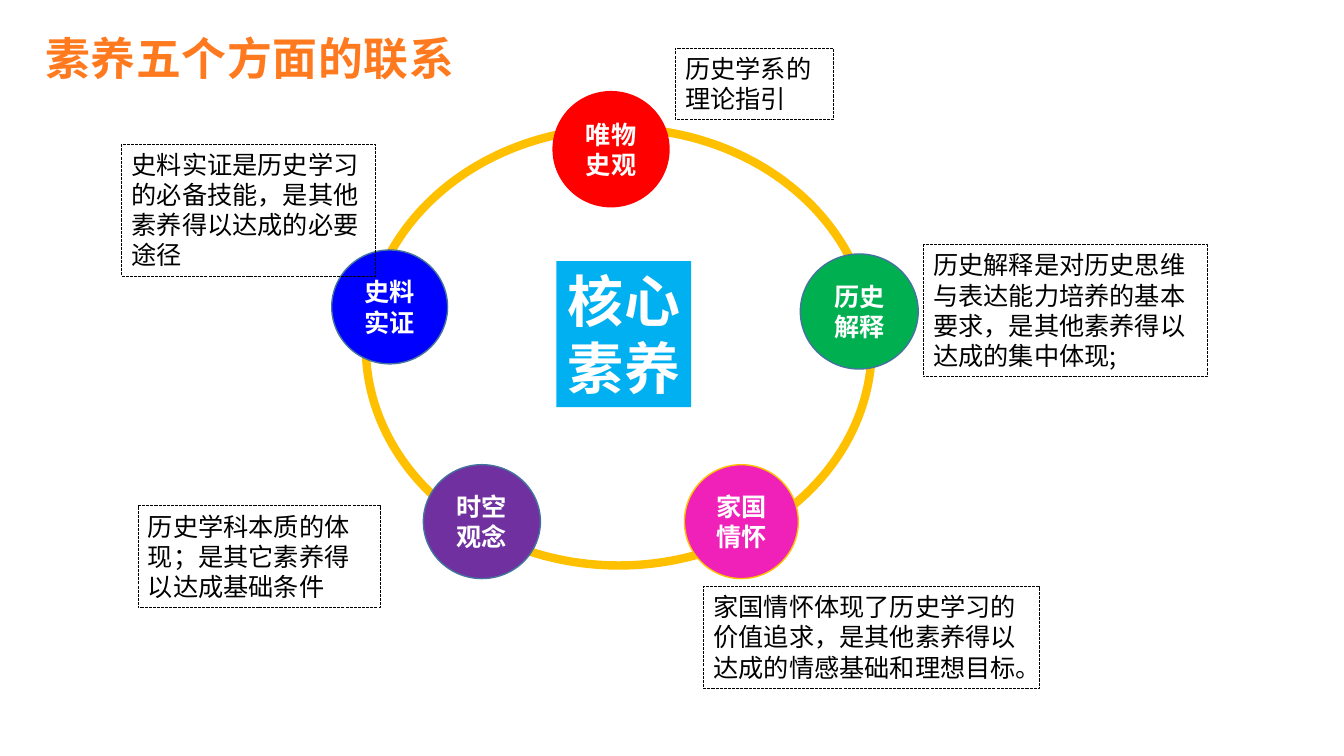
from lxml import etree
from pptx import Presentation
from pptx.dml.color import RGBColor
from pptx.enum.dml import MSO_LINE
from pptx.enum.shapes import MSO_SHAPE
from pptx.enum.text import MSO_ANCHOR, MSO_AUTO_SIZE, PP_ALIGN
from pptx.oxml.ns import qn
from pptx.util import Cm, Pt

OVAL = MSO_SHAPE.OVAL
RECTANGLE = MSO_SHAPE.RECTANGLE
SHORT_DASH = MSO_LINE.SQUARE_DOT
TOP = MSO_ANCHOR.TOP
MIDDLE = MSO_ANCHOR.MIDDLE
GROW = MSO_AUTO_SIZE.SHAPE_TO_FIT_TEXT
LEFT = PP_ALIGN.LEFT
CENTER = PP_ALIGN.CENTER

BODY_FONT = "Noto Sans CJK SC"
DISPLAY_FONT = "Calibri"
WHITE = "FFFFFF"
BLACK = "000000"
GOLD = "FFC000"
STEEL = "43739E"

COMPETENCIES = [
    ("唯物史观", (13.94, 2.31, 2.92, 2.9), "FF0000", "FF0000"),
    ("史料实证", (8.36, 6.3, 2.92, 2.87), "0000FF", STEEL),
    ("历史解释", (20.17, 6.4, 2.97, 2.9), "00B050", STEEL),
    ("时空观念", (10.67, 11.71, 2.95, 2.87), "7030A0", STEEL),
    ("家国情怀", (17.25, 11.71, 2.87, 2.87), "EF21B9", GOLD),
]

NOTES = [
    ("历史学系的理论指引", (17.02, 1.22, 3.99, 1.8)),
    ("史料实证是历史学习的必备技能，是其他素养得以达成的必要途径",
     (3.07, 3.63, 6.4, 3.33)),
    ("历史解释是对历史思维与表达能力培养的基本要求，是其他素养得以达成的集中体现;",
     (23.27, 6.17, 7.16, 3.33)),
    ("家国情怀体现了历史学习的价值追求，是其他素养得以达成的情感基础和理想目标。",
     (17.73, 14.78, 8.46, 2.57)),
    ("历史学科本质的体现；是其它素养得以达成基础条件",
     (3.48, 12.75, 6.1, 2.57)),
]


def color(value):
    return RGBColor.from_string(value)


def add_outline(slide, kind, box, fill=None, line=None, width=1):
    shape = slide.shapes.add_shape(kind, *map(Cm, box))
    shape.shadow.inherit = False
    if fill:
        shape.fill.solid()
        shape.fill.fore_color.rgb = color(fill)
    else:
        shape.fill.background()
    if line:
        shape.line.color.rgb = color(line)
        shape.line.width = Pt(width)
    else:
        shape.line.fill.background()
    return shape


def write(shape, lines, size, text_color, font_name=BODY_FONT, bold=False,
          align=CENTER, anchor=TOP, wrap=True):
    frame = shape.text_frame
    frame.text = "\n".join(lines)
    frame.word_wrap = wrap
    frame.vertical_anchor = anchor
    for paragraph in frame.paragraphs:
        paragraph.alignment = align
        font = paragraph.font
        font.name = font_name
        font.size = Pt(size)
        font.bold = bold
        font.color.rgb = color(text_color)
        properties = paragraph._p.pPr.find(qn("a:defRPr"))
        etree.SubElement(properties, qn("a:ea"), typeface=font_name)
        if font_name == DISPLAY_FONT:
            properties.set("spc", "50")


def add_competency(slide, name, box, fill, line):
    circle = add_outline(slide, OVAL, box, fill, line)
    write(circle, [name], 18, WHITE, bold=True, anchor=MIDDLE)


def add_note(slide, text, box):
    note = add_outline(slide, RECTANGLE, box, line=BLACK, width=0.75)
    note.line.dash_style = SHORT_DASH
    write(note, [text], 18, BLACK, align=LEFT)
    note.text_frame.auto_size = GROW


def add_title(slide, text, box):
    title = slide.shapes.add_textbox(*map(Cm, box))
    write(title, [text], 32, "FF7A1F", DISPLAY_FONT, bold=True, wrap=False)
    title.text_frame.auto_size = GROW
    fill = title.text_frame.paragraphs[0].font.fill
    fill.gradient()
    fill.gradient_angle = 270
    stops = [(0.25, "FF7A1F"), (1, "CA5200")]
    for stop, (position, value) in zip(fill.gradient_stops, stops):
        stop.position = position
        stop.color.rgb = color(value)


def add_core(slide, lines, box):
    core = add_outline(slide, RECTANGLE, box, fill="00B0F0")
    write(core, lines, 40, WHITE, DISPLAY_FONT, bold=True, wrap=False)
    core.text_frame.auto_size = GROW


def main():
    presentation = Presentation()
    presentation.slide_width = Cm(33.87)
    presentation.slide_height = Cm(19.05)
    slide = presentation.slides.add_slide(presentation.slide_layouts[6])

    add_outline(slide, OVAL, (9.22, 3.23, 12.75, 11.02), line=GOLD, width=6)
    for competency in COMPETENCIES:
        add_competency(slide, *competency)
    for note in NOTES:
        add_note(slide, *note)
    add_title(slide, "素养五个方面的联系", (0.84, 0.64, 10.92, 1.63))
    add_core(slide, ["核心", "素养"], (14.02, 6.58, 3.4, 3.68))

    presentation.save("out.pptx")


if __name__ == "__main__":
    main()
